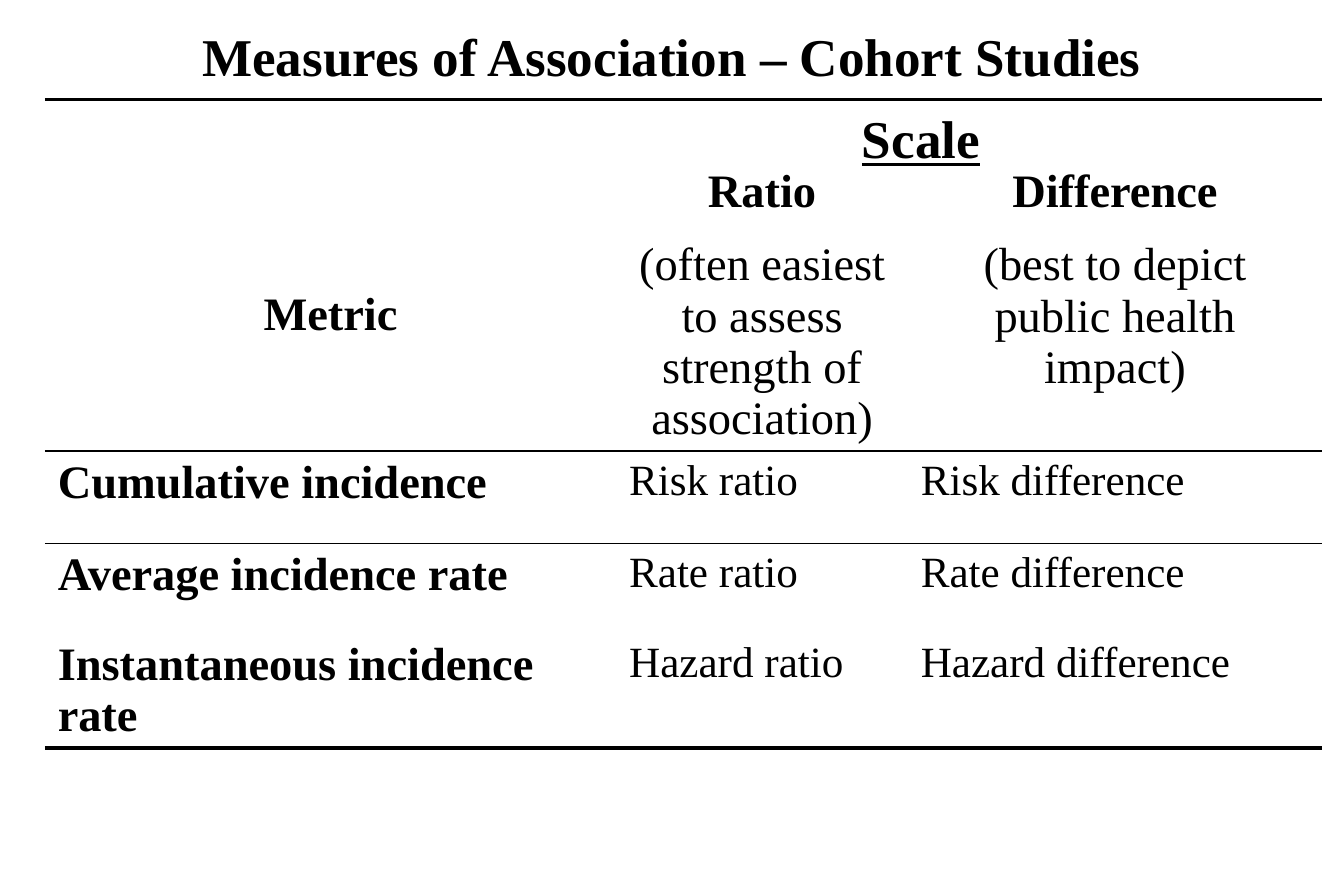
from pptx import Presentation
from pptx import util as u
from pptx.dml.color import RGBColor
from pptx.enum import text
from pptx.oxml import parse_xml
from pptx.oxml.ns import nsdecls

PX = 7620  # 120 px to the inch
BLACK = "000000"
CENTER, LEFT = text.PP_ALIGN.CENTER, text.PP_ALIGN.LEFT


def write(paragraph, words, align=LEFT, **font):
    paragraph.alignment = align
    run = paragraph.add_run()
    run.text = words
    run.font.color.rgb = RGBColor.from_string(BLACK)
    for key, value in {"name": "Times New Roman", **font}.items():
        setattr(run.font, key, value)


def rule(cell, side, points):
    """Draw a cell border on side T or B."""
    cell._tc.get_or_add_tcPr().append(parse_xml(
        f'<a:ln{side} {nsdecls("a")} w="{u.Pt(points)}"><a:solidFill>'
        f'<a:srgbClr val="{BLACK}"/></a:solidFill></a:ln{side}>'))


prs = Presentation()
prs.slide_width, prs.slide_height = 1350 * PX, 900 * PX
slide = prs.slides.add_slide(prs.slide_layouts[5])

title = slide.shapes.title
title.left, title.top, title.width, title.height = 0, -20 * PX, 1350 * PX, 150 * PX
title.text_frame.vertical_anchor = text.MSO_ANCHOR.MIDDLE
write(title.text_frame.paragraphs[0], "Measures of Association – Cohort Studies",
      CENTER, size=u.Pt(32), bold=True)

# Heading, note below it, distance from the top of the header row
headers = [
    ("Metric", None, 190),
    ("Ratio", "(often easiest to assess strength of association)", 67),
    ("Difference", "(best to depict public health impact)", 67),
]
measures = [
    ("Cumulative incidence", "Risk ratio", "Risk difference"),
    ("Average incidence rate", "Rate ratio", "Rate difference"),
    ("Instantaneous incidence rate", "Hazard ratio", "Hazard difference"),
]
column_widths = [574, 293, 416]
row_heights = [351, 93, 90, 115]

frame = slide.shapes.add_table(4, 3, 45 * PX, 100 * PX,
                               sum(column_widths) * PX, sum(row_heights) * PX)
table = frame.table
table.first_row = table.horz_banding = False
# "No Style, No Grid"
table._tbl.tblPr.find("{*}tableStyleId").text = "{2D5ABB26-0587-4C30-8999-92F81FD0307C}"
for column, width in zip(table.columns, column_widths):
    column.width = width * PX
for row, height in zip(table.rows, row_heights):
    row.height = height * PX

for c, (heading, note, top) in enumerate(headers):
    cell = table.cell(0, c)
    cell.margin_top = top * PX
    write(cell.text_frame.paragraphs[0], heading, CENTER, size=u.Pt(28), bold=True)
    if note:
        paragraph = cell.text_frame.add_paragraph()
        paragraph.space_before = u.Pt(13)
        write(paragraph, note, CENTER, size=u.Pt(28), bold=False)
    rule(cell, "T", 2.25)
    rule(cell, "B", 1)
    rule(table.cell(1, c), "T", 1)
    rule(table.cell(3, c), "B", 2.25)

for r, measure in enumerate(measures, 1):
    for c, words in enumerate(measure):
        write(table.cell(r, c).text_frame.paragraphs[0], words,
              size=u.Pt(26 if c else 28), bold=c == 0)

for cell in table.iter_cells():
    cell.fill.background()
    cell.margin_left = cell.margin_right = 13 * PX

scale_label = slide.shapes.add_textbox(854 * PX, 100 * PX, 203 * PX, 77 * PX)
scale_label.text_frame.word_wrap = True
write(scale_label.text_frame.paragraphs[0], "Scale",
      size=u.Pt(32), bold=True, underline=True)

prs.save("out.pptx")
